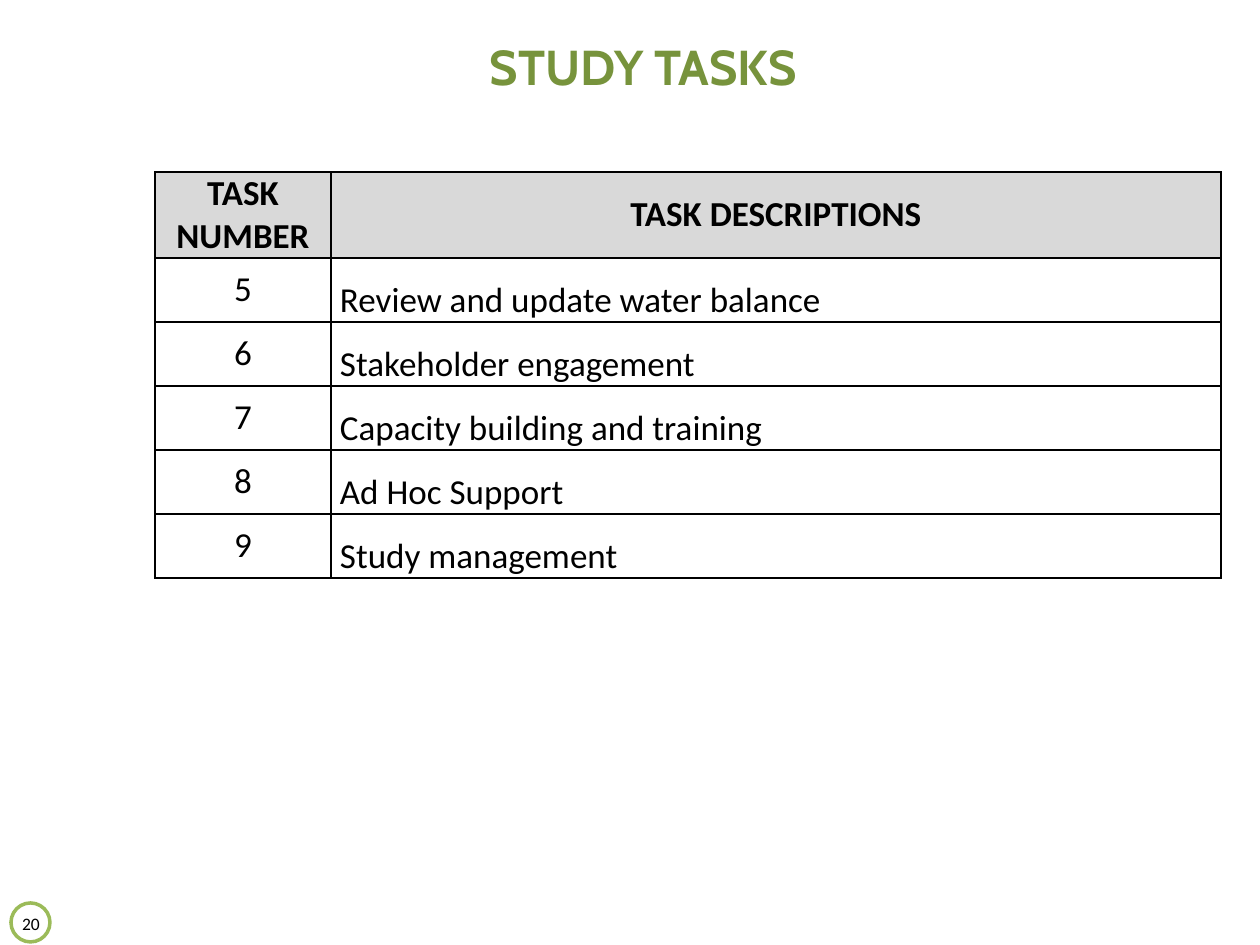
from pptx import Presentation
from pptx.dml.color import RGBColor
from pptx.enum.shapes import MSO_SHAPE as Shape
from pptx.enum.text import MSO_ANCHOR as Anchor, PP_ALIGN as Align
from pptx.oxml import parse_xml
from pptx.oxml.ns import nsdecls
from pptx.util import Pt

# Content
TITLE = "STUDY TASKS"
PAGE_NUMBER = "20"
HEADINGS = ("TASK NUMBER", "TASK DESCRIPTIONS")
FIRST_TASK = 5
TASKS = [
    "Review and update water balance",
    "Stakeholder engagement",
    "Capacity building and training",
    "Ad Hoc Support",
    "Study management",
]

THEME = {
    "title": {"name": "Cabin", "size": Pt(28), "bold": True, "color": "77933C"},
    "heading": {"name": "Calibri", "size": Pt(20), "bold": True, "color": "000000"},
    "body": {"name": "Calibri", "size": Pt(20), "bold": False, "color": "000000"},
    "number": {"name": "Calibri", "size": Pt(10), "bold": False, "color": "000000"},
    "header_fill": "D9D9D9",
    "border": "000000",
    "ring": "9BBB59",
    "paper": "FFFFFF",
}

# Layout in px
PX_PER_INCH = 126
PAGE_SIZE = (1260, 945)
TITLE_BOX = (451, 30, 384, 72)
TABLE_ORIGIN = (155, 172)
COLUMN_WIDTHS = (176, 890)
HEADER_HEIGHT, ROW_HEIGHT = 86, 64
RING_BOX = (11, 903, 39, 39)
NUMBER_BOX = (11, 907, 40, 25)


def px(value):
    return round(value * 914400 / PX_PER_INCH)


def rgb(name):
    return RGBColor.from_string(THEME[name])


def write(frame, text, style, align=Align.CENTER, line_spacing=None):
    para = frame.paragraphs[0]
    para.alignment = align
    para.line_spacing = line_spacing
    span = para.add_run()
    span.text = text
    for name, value in THEME[style].items():
        if name == "color":
            span.font.color.rgb = RGBColor.from_string(value)
        else:
            setattr(span.font, name, value)


def set_borders(cell):
    props = cell._tc.get_or_add_tcPr()
    for index, side in enumerate(("lnL", "lnR", "lnT", "lnB")):
        props.insert(index, parse_xml(
            f'<a:{side} {nsdecls("a")} w="{Pt(1)}"><a:solidFill>'
            f'<a:srgbClr val="{THEME["border"]}"/></a:solidFill></a:{side}>'))


def add_title(page):
    title = page.shapes.title
    title.left, title.top, title.width, title.height = map(px, TITLE_BOX)
    title.text_frame.vertical_anchor = Anchor.MIDDLE
    write(title.text_frame, TITLE, "title")


def add_task_table(page):
    rows = [HEADINGS] + [(str(n), task) for n, task in enumerate(TASKS, FIRST_TASK)]
    heights = [HEADER_HEIGHT] + [ROW_HEIGHT] * len(TASKS)
    table = page.shapes.add_table(
        len(rows), len(HEADINGS), *map(px, TABLE_ORIGIN),
        px(sum(COLUMN_WIDTHS)), px(sum(heights))).table
    table.horz_banding = False
    for column, width in zip(table.columns, COLUMN_WIDTHS):
        column.width = px(width)
    for r, (row, height) in enumerate(zip(rows, heights)):
        table.rows[r].height = px(height)
        for c, text in enumerate(row):
            cell = table.cell(r, c)
            cell.vertical_anchor = Anchor.MIDDLE
            cell.margin_left = cell.margin_right = px(9)
            cell.margin_top = cell.margin_bottom = 0
            if r == 0:
                cell.fill.solid()
                cell.fill.fore_color.rgb = rgb("header_fill")
                write(cell.text_frame, text, "heading")
            else:
                cell.fill.background()
                if c == 0:
                    write(cell.text_frame, text, "body")
                else:
                    write(cell.text_frame, text, "body", Align.LEFT, 1.5)
            set_borders(cell)


def add_page_number(page):
    ring = page.shapes.add_shape(Shape.OVAL, *map(px, RING_BOX))
    ring.shadow.inherit = False
    ring.fill.solid()
    ring.fill.fore_color.rgb = rgb("paper")
    ring.line.color.rgb = rgb("ring")
    ring.line.width = Pt(2)
    frame = page.shapes.add_textbox(*map(px, NUMBER_BOX)).text_frame
    frame.word_wrap = True
    frame.margin_left = frame.margin_right = 0
    write(frame, PAGE_NUMBER, "number")


def main():
    deck = Presentation()
    deck.slide_width, deck.slide_height = map(px, PAGE_SIZE)
    page = deck.slides.add_slide(deck.slide_layouts[5])
    add_page_number(page)
    add_title(page)
    add_task_table(page)
    deck.save("out.pptx")


if __name__ == "__main__":
    main()
